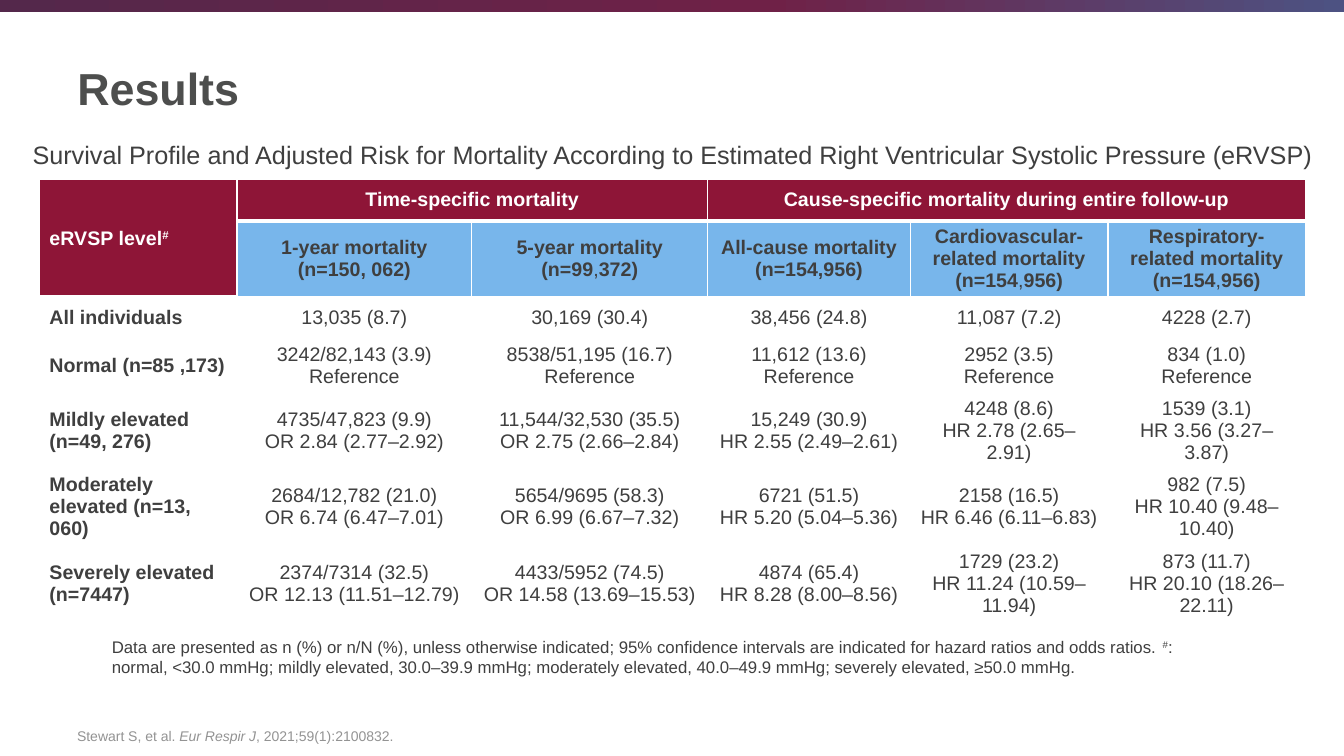
from copy import deepcopy
from dataclasses import dataclass

from lxml.etree import SubElement as Sub
from pptx import Presentation
from pptx.dml.color import RGBColor as RGB
from pptx.enum.shapes import MSO_SHAPE as Shape
from pptx.enum.text import MSO_ANCHOR as Anchor, MSO_AUTO_SIZE as Auto, PP_ALIGN as Align
from pptx.oxml.ns import qn
from pptx.util import Emu, Inches, Pt

WIDTH, HEIGHT = Inches(13.33), Inches(7.5)


@dataclass(frozen=True)
class Theme:
    font: str = "Arial"
    title: str = "4D4E4D"
    ink: str = "3F3F3F"
    pale: str = "939393"
    white: str = "FFFFFF"
    wine: str = "8E1537"
    sky: str = "78B6EB"
    bar: tuple[tuple[float, str], ...] = ((0, "54284B"), (0.57, "6F2147"), (1, "4D5282"))
    head_size: int = 32
    lead_size: int = 18
    cell_size: int = 14
    note_size: int = 12
    cite_size: int = 10


@dataclass(frozen=True)
class Bit:
    text: str
    bold: bool = False
    slant: bool = False
    lift: bool = False


@dataclass(frozen=True)
class Look:
    size: int
    color: str
    align: Align = Align.LEFT


@dataclass(frozen=True)
class Box:
    x: float
    y: float
    w: float
    h: float

    def place(self) -> tuple[Emu, Emu, Emu, Emu]:
        return wide(self.x), high(self.y), wide(self.w), high(self.h)


@dataclass(frozen=True)
class Label:
    box: Box
    look: Look
    bits: tuple[Bit, ...]
    anchor: Anchor = Anchor.TOP
    grow: bool = True


@dataclass(frozen=True)
class Head:
    row: int
    col: int
    rows: int
    cols: int
    bits: tuple[Bit, ...]


THEME = Theme()


def wide(part: float) -> Emu:
    return Emu(round(WIDTH * part / 100))


def high(part: float) -> Emu:
    return Emu(round(HEIGHT * part / 100))


def bold(*texts: str) -> tuple[Bit, ...]:
    return tuple(Bit(text, bold=text != ",") for text in texts)


COLS = (14.7, 17.48, 17.55, 15.08, 14.7, 14.7)
ROWS = (5.47, 10.05, 5.47, 7.2, 10.05, 10.05, 10.05)
GRID = Box(2.93, 23.73, sum(COLS), sum(ROWS))

HEADS = (
    Head(0, 0, 2, 1, bold("eRVSP level") + (Bit("#", bold=True, lift=True),)),
    Head(0, 1, 1, 2, bold("Time-specific mortality")),
    Head(0, 3, 1, 3, bold("Cause-specific mortality during entire follow-up")),
)
SUBS = (
    bold("1-year mortality\n(n=150, 062)"),
    bold("5-year mortality\n(n=99", ",", "372)"),
    bold("All-cause mortality\n(n=154,956)"),
    bold("Cardiovascular-related mortality\n(n=154", ",", "956)"),
    bold("Respiratory-related mortality\n(n=154", ",", "956)"),
)
DATA = (
    ("All individuals", "13,035 (8.7)", "30,169 (30.4)", "38,456 (24.8)",
     "11,087 (7.2)", "4228 (2.7)"),
    ("Normal (n=85 ,173)", "3242/82,143 (3.9)\nReference", "8538/51,195 (16.7)\nReference",
     "11,612 (13.6)\nReference", "2952 (3.5)\nReference", "834 (1.0)\nReference"),
    ("Mildly elevated (n=49, 276)", "4735/47,823 (9.9)\nOR 2.84 (2.77–2.92)",
     "11,544/32,530 (35.5)\nOR 2.75 (2.66–2.84)", "15,249 (30.9)\nHR 2.55 (2.49–2.61)",
     "4248 (8.6)\nHR 2.78 (2.65–2.91)", "1539 (3.1)\nHR 3.56 (3.27–3.87)"),
    ("Moderately elevated (n=13, 060)", "2684/12,782 (21.0)\nOR 6.74 (6.47–7.01)",
     "5654/9695 (58.3)\nOR 6.99 (6.67–7.32)", "6721 (51.5)\nHR 5.20 (5.04–5.36)",
     "2158 (16.5)\nHR 6.46 (6.11–6.83)", "982 (7.5)\nHR 10.40 (9.48–10.40)"),
    ("Severely elevated (n=7447)", "2374/7314 (32.5)\nOR 12.13 (11.51–12.79)",
     "4433/5952 (74.5)\nOR 14.58 (13.69–15.53)", "4874 (65.4)\nHR 8.28 (8.00–8.56)",
     "1729 (23.2)\nHR 11.24 (10.59–11.94)", "873 (11.7)\nHR 20.10 (18.26–22.11)"),
)
LABELS = (
    Label(Box(5, 92.67, 88.15, 6.4), Look(THEME.cite_size, THEME.pale),
          (Bit("Stewart S, et al. "), Bit("Eur Respir J", slant=True),
           Bit(", 2021;59(1):2100832.")), Anchor.BOTTOM, False),
    Label(Box(7.58, 83.6, 84.85, 6.67), Look(THEME.note_size, THEME.ink),
          (Bit("Data are presented as n (%) or n/N (%), unless otherwise indicated; "
               "95% confidence intervals are indicated for hazard ratios and odds ratios. "),
           Bit("#", lift=True),
           Bit(": normal, <30.0 mmHg; mildly elevated, 30.0–39.9 mmHg; "
               "moderately elevated, 40.0–49.9 mmHg; severely elevated, ≥50.0 mmHg."))),
    Label(Box(1.43, 17.73, 97.22, 5.33), Look(THEME.lead_size, THEME.ink, Align.CENTER),
          (Bit("Survival Profile and Adjusted Risk for Mortality According to "
               "Estimated Right Ventricular Systolic Pressure (eRVSP)"),)),
)


def write(frame, bits: tuple[Bit, ...], look: Look) -> None:
    par = frame.paragraphs[0]
    par.alignment = look.align
    for bit in bits:
        for turn, text in enumerate(bit.text.split("\n")):
            if turn:
                par.add_line_break()
            run = par.add_run()
            run.text = text
            font = run.font
            font.name, font.size = THEME.font, Pt(look.size)
            font.bold, font.italic = bit.bold, bit.slant
            font.color.rgb = RGB.from_string(look.color)
            if bit.lift:
                run._r.get_or_add_rPr().set("baseline", "30000")


def edge(cell, base: int) -> None:
    props = cell._tc.get_or_add_tcPr()
    for side, size in (("lnL", 1), ("lnR", 1), ("lnT", 1), ("lnB", base)):
        line = Sub(props, qn(f"a:{side}"), w=str(Pt(size)))
        fill = Sub(line, qn("a:solidFill"))
        Sub(fill, qn("a:srgbClr"), val=THEME.white)


def set_cell(cell, bits: tuple[Bit, ...], look: Look, fill: str = "", base: int = 1) -> None:
    cell.vertical_anchor = Anchor.MIDDLE
    edge(cell, base)
    if fill:
        cell.fill.solid()
        cell.fill.fore_color.rgb = RGB.from_string(fill)
    else:
        cell.fill.background()
    write(cell.text_frame, bits, look)


def draw_bar(slide) -> None:
    bar = slide.shapes.add_shape(Shape.RECTANGLE, *Box(0, 0, 100, 1.6).place())
    bar.shadow.inherit = False
    bar.line.fill.background()
    bar.fill.gradient()
    bar.fill.gradient_angle = 0
    stops = bar._element.spPr.find(f".//{qn('a:gsLst')}")
    stops.append(deepcopy(stops[0]))
    for stop, (spot, color) in zip(bar.fill.gradient_stops, THEME.bar):
        stop.position = spot
        stop.color.rgb = RGB.from_string(color)


def draw_title(slide) -> None:
    title = slide.shapes.title
    title.left, title.top, title.width, title.height = Box(5, 2.93, 88.15, 17.33).place()
    title.text_frame.vertical_anchor = Anchor.MIDDLE
    write(title.text_frame, bold("Results"), Look(THEME.head_size, THEME.title))


def draw_label(slide, label: Label) -> None:
    frame = slide.shapes.add_textbox(*label.box.place()).text_frame
    frame.word_wrap = True
    frame.vertical_anchor = label.anchor
    frame.auto_size = Auto.SHAPE_TO_FIT_TEXT if label.grow else Auto.NONE
    write(frame, label.bits, label.look)


def draw_table(slide) -> None:
    table = slide.shapes.add_table(len(ROWS), len(COLS), *GRID.place()).table
    table.horz_banding = False
    for col, part in zip(table.columns, COLS):
        col.width = wide(part)
    for row, part in zip(table.rows, ROWS):
        row.height = high(part)
    for head in HEADS:
        cell = table.cell(head.row, head.col)
        cell.merge(table.cell(head.row + head.rows - 1, head.col + head.cols - 1))
        align = Align.CENTER if head.col else Align.LEFT
        set_cell(cell, head.bits, Look(THEME.cell_size, THEME.white, align), THEME.wine, 3)
    left = Look(THEME.cell_size, THEME.ink)
    mid = Look(THEME.cell_size, THEME.ink, Align.CENTER)
    for col, bits in enumerate(SUBS, 1):
        set_cell(table.cell(1, col), bits, mid, THEME.sky)
    for row, (name, *vals) in enumerate(DATA, 2):
        set_cell(table.cell(row, 0), bold(name), left)
        for col, val in enumerate(vals, 1):
            set_cell(table.cell(row, col), (Bit(val),), mid)


def main() -> None:
    deck = Presentation()
    deck.slide_width, deck.slide_height = WIDTH, HEIGHT
    slide = deck.slides.add_slide(deck.slide_layouts[5])
    draw_bar(slide)
    draw_title(slide)
    draw_table(slide)
    for label in LABELS:
        draw_label(slide, label)
    deck.save("out.pptx")


if __name__ == "__main__":
    main()
